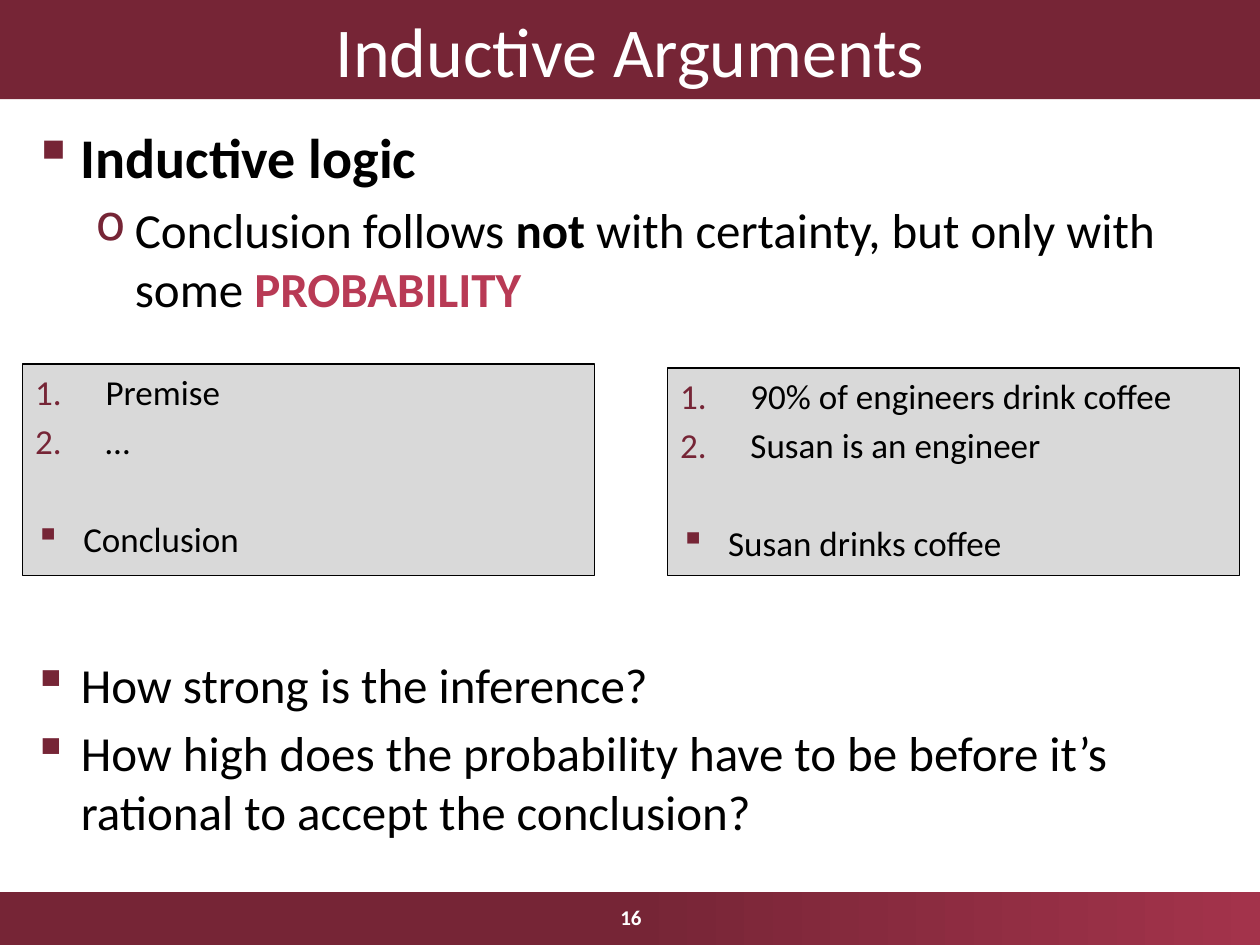
from lxml import etree
from pptx import Presentation
from pptx.dml.color import RGBColor
from pptx.enum.shapes import MSO_SHAPE
from pptx.enum.text import MSO_ANCHOR, PP_ALIGN
from pptx.oxml.ns import qn
from pptx.util import Cm, Pt

RECT = MSO_SHAPE.RECTANGLE
TOP, MID = MSO_ANCHOR.TOP, MSO_ANCHOR.MIDDLE
LEFT, MIDDLE = PP_ALIGN.LEFT, PP_ALIGN.CENTER
HUES = {"wine": "762536", "rose": "A3334B", "pink": "B83A55",
        "gray": "D9D9D9", "black": "000000", "white": "FFFFFF"}
RGB = {name: RGBColor.from_string(code) for name, code in HUES.items()}


def write(frame, text, size=28, hue="black", bold=False, align=LEFT,
          mark=None, left=0.97, hang=0.97, gap=0, join=False):
    par = frame.paragraphs[-1]
    if par.runs and not join:
        par = frame.add_paragraph()
    if not join:
        par.alignment = align
        par.space_before = Pt(gap)
    if mark:
        props = par._p.get_or_add_pPr()
        props.set("marL", str(Cm(left)))
        props.set("indent", str(-Cm(hang)))
        tint = etree.SubElement(props, qn("a:buClr"))
        etree.SubElement(tint, qn("a:srgbClr"), val=HUES["wine"])
        if mark == "1.":
            etree.SubElement(props, qn("a:buAutoNum"), type="arabicPeriod")
        else:
            etree.SubElement(props, qn("a:buChar"), char=mark)
    run = par.add_run()
    run.text = text
    run.font.name = "Calibri"
    run.font.size = Pt(size)
    run.font.bold = bold
    run.font.color.rgb = RGB[hue]


def frame_at(left, top, width, height, anchor=TOP):
    box = slide.shapes.add_textbox(Cm(left), Cm(top), Cm(width), Cm(height))
    box.text_frame.word_wrap = True
    box.text_frame.vertical_anchor = anchor
    return box.text_frame


deck = Presentation()
deck.slide_width, deck.slide_height = Cm(25.4), Cm(19.05)
slide = deck.slides.add_slide(deck.slide_layouts[5])

title = slide.shapes.title
title.left, title.top, title.width, title.height = 0, 0, Cm(25.4), Cm(2)
title.fill.solid()
title.fill.fore_color.rgb = RGB["wine"]
title.text_frame.vertical_anchor = MID
write(title.text_frame, "Inductive Arguments", size=40, hue="white", align=MIDDLE)

bar = slide.shapes.add_shape(RECT, 0, Cm(17.98), Cm(25.4), Cm(1.07))
bar.shadow.inherit = False
bar.line.fill.background()
bar.fill.gradient()
bar.fill.gradient_angle = 0
for stop, spot, hue in zip(bar.fill.gradient_stops, (0.5, 1), ("wine", "rose")):
    stop.position = spot
    stop.color.rgb = RGB[hue]
page = frame_at(9.86, 17.98, 5.72, 1.02, MID)
write(page, "16", size=12, hue="white", bold=True, align=MIDDLE)

logic = frame_at(0.41, 2.34, 24.61, 4.32)
write(logic, "Inductive logic", size=32, bold=True, mark="▪")
write(logic, "Conclusion follows ", mark="o", left=2.06, hang=0.79, gap=5.6)
write(logic, "not ", bold=True, join=True)
write(logic, "with certainty, but only with some ", join=True)
write(logic, "PROBABILITY", hue="pink", bold=True, join=True)

cards = [
    (0.46, 7.34, ["Premise", "…"], "Conclusion"),
    (13.46, 7.42, ["90% of engineers drink coffee", "Susan is an engineer"],
     "Susan drinks coffee"),
]
for left, top, claims, result in cards:
    card = slide.shapes.add_shape(RECT, Cm(left), Cm(top), Cm(11.53), Cm(11.6 - top))
    card.shadow.inherit = False
    card.fill.solid()
    card.fill.fore_color.rgb = RGB["gray"]
    card.line.color.rgb = RGB["black"]
    card.line.width = Pt(0.75)
    card.text_frame.vertical_anchor = TOP
    for row, claim in enumerate(claims):
        write(card.text_frame, claim, size=20, mark="1.", left=1.42, hang=1.42,
              gap=4 * row)
    write(card.text_frame, result, size=20, mark="▪", gap=32)

asks = frame_at(0.41, 13.06, 24.61, 4.27)
write(asks, "How strong is the inference?", mark="▪")
write(asks, "How high does the probability have to be before it’s rational "
      "to accept the conclusion?", mark="▪", gap=5.6)

deck.save("out.pptx")
